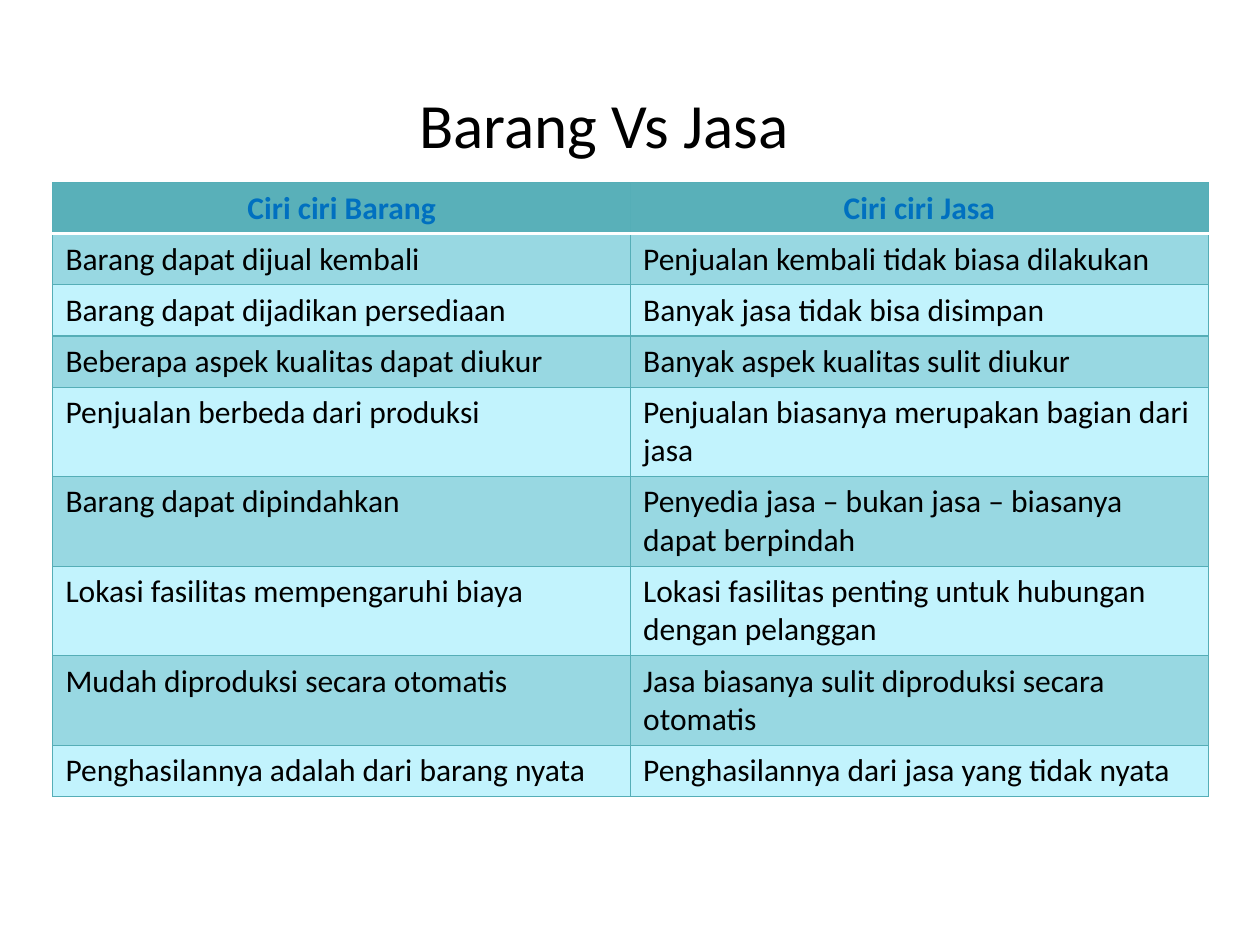
import lxml.etree
import pptx
import pptx.dml.color
import pptx.enum.text
import pptx.oxml.ns
import pptx.util

Inches = pptx.util.Inches
Pt = pptx.util.Pt
ALIGN = pptx.enum.text.PP_ALIGN

COLORS = {
    "text": "000000",
    "header_text": "0070C0",
    "header": "59B0B9",
    "band": "98D8E2",
    "plain": "C2F3FD",
    "grid": "55AEB7",
    "divider": "FFFFFF",
}

TITLE = "Barang Vs Jasa"
ROWS = [
    ("Ciri ciri Barang", "Ciri ciri Jasa"),
    ("Barang dapat dijual kembali", "Penjualan kembali tidak biasa dilakukan"),
    ("Barang dapat dijadikan persediaan", "Banyak jasa tidak bisa disimpan"),
    ("Beberapa aspek kualitas dapat diukur", "Banyak aspek kualitas sulit diukur"),
    ("Penjualan berbeda dari produksi", "Penjualan biasanya merupakan bagian dari jasa"),
    ("Barang dapat dipindahkan", "Penyedia jasa – bukan jasa – biasanya dapat berpindah"),
    ("Lokasi fasilitas mempengaruhi biaya",
     "Lokasi fasilitas penting untuk hubungan dengan pelanggan"),
    ("Mudah diproduksi secara otomatis", "Jasa biasanya sulit diproduksi secara otomatis"),
    ("Penghasilannya adalah dari barang nyata", "Penghasilannya dari jasa yang tidak nyata"),
]
SINGLE_LINE, DOUBLE_LINE = 0.39, 0.68
ROW_HEIGHTS = [SINGLE_LINE] * 4 + [DOUBLE_LINE] * 4 + [SINGLE_LINE]


class SlideBuilder:
    font_name = "Calibri"

    def __init__(self, deck):
        self.page = deck.slides.add_slide(deck.slide_layouts[5])

    def rgb(self, name):
        return pptx.dml.color.RGBColor.from_string(COLORS[name])

    def set_text(self, frame, text, size, color="text", bold=False, align=ALIGN.LEFT):
        frame.text = text
        para = frame.paragraphs[0]
        para.alignment = align
        font = para.runs[0].font
        font.name, font.size, font.bold = self.font_name, Pt(size), bold
        font.color.rgb = self.rgb(color)

    def title(self, text, left, top, width, height):
        box = self.page.shapes.title
        box.left, box.top = Inches(left), Inches(top)
        box.width, box.height = Inches(width), Inches(height)
        box.text_frame.vertical_anchor = pptx.enum.text.MSO_ANCHOR.MIDDLE
        self.set_text(box.text_frame, text, 36, align=ALIGN.CENTER)

    def border(self, cell, side, color, width):
        qn = pptx.oxml.ns.qn
        properties = cell._tc.get_or_add_tcPr()
        line = lxml.etree.SubElement(properties, qn(f"a:ln{side}"), w=str(Pt(width)))
        fill = lxml.etree.SubElement(line, qn("a:solidFill"))
        lxml.etree.SubElement(fill, qn("a:srgbClr"), val=COLORS[color])

    def cell(self, cell, text, row):
        header = row == 0
        divided_side = {0: "B", 1: "T"}.get(row)
        for side in "LRTB":
            style = ("divider", 2) if side == divided_side else ("grid", 0.75)
            self.border(cell, side, *style)
        cell.fill.solid()
        fill = "header" if header else "band" if row % 2 else "plain"
        cell.fill.fore_color.rgb = self.rgb(fill)
        if header:
            self.set_text(cell.text_frame, text, 18, "header_text", True, ALIGN.CENTER)
        else:
            self.set_text(cell.text_frame, text, 18)

    def table(self, rows, heights, left, top, width):
        frame = self.page.shapes.add_table(
            len(rows), len(rows[0]), Inches(left), Inches(top),
            Inches(width), Inches(sum(heights)))
        for row, (texts, height) in enumerate(zip(rows, heights)):
            frame.table.rows[row].height = Inches(height)
            for column, text in enumerate(texts):
                self.cell(frame.table.cell(row, column), text, row)


def main():
    deck = pptx.Presentation()
    deck.slide_width, deck.slide_height = Inches(10), Inches(7.5)
    builder = SlideBuilder(deck)
    builder.title(TITLE, 1.67, 0.63, 6.25, 0.7)
    builder.table(ROWS, ROW_HEIGHTS, 0.42, 1.45, 9.17)
    deck.save("out.pptx")


if __name__ == "__main__":
    main()
